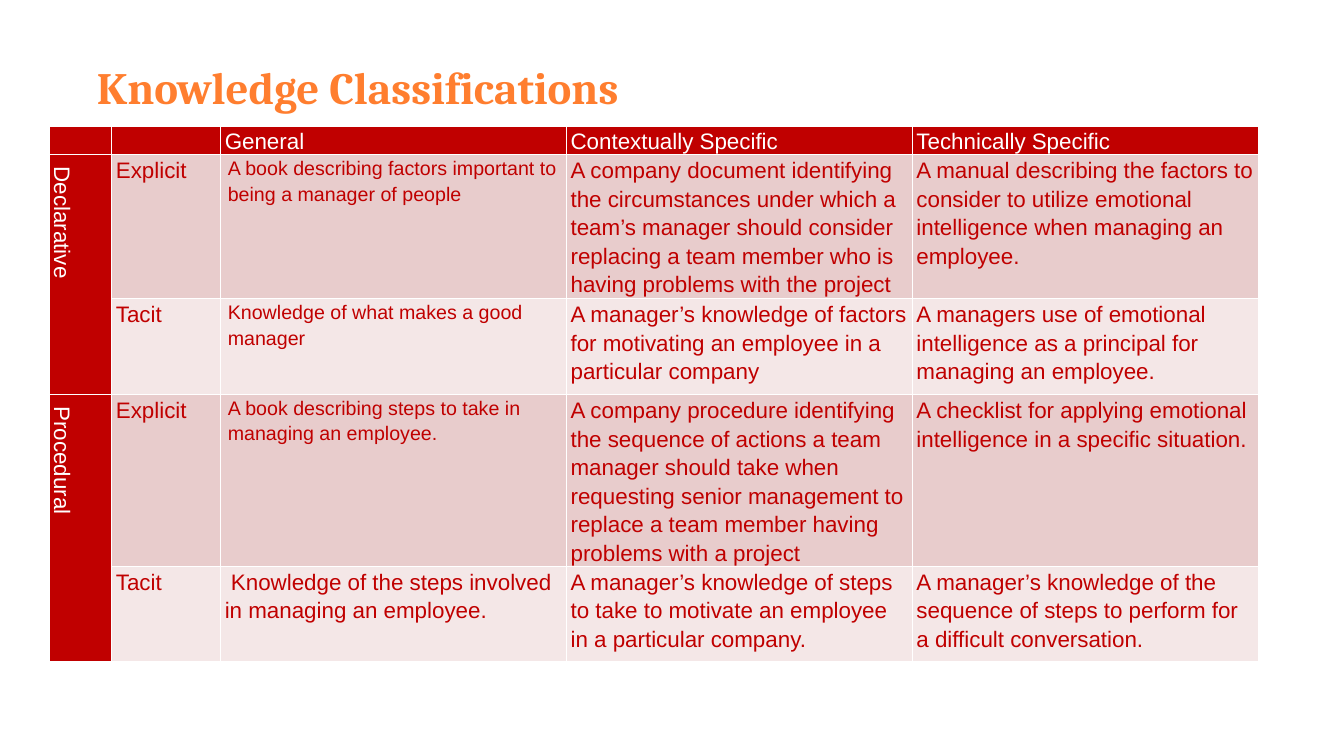
"""Build the knowledge classifications slide."""
from dataclasses import dataclass

from pptx import Presentation, util as u
from pptx.dml.color import RGBColor
from pptx.enum import text
from pptx.oxml import parse_xml
from pptx.oxml.ns import nsdecls

GRID_UNIT = u.Inches(0.01)
SLIDE_COLUMNS, SLIDE_ROWS = 1333, 750
TABLE_LEFT, TABLE_TOP = 49, 125
COLUMN_SPANS = (62, 108, 343, 343, 343)
ROW_SPANS = (26, 143, 95, 169, 95)
RED, WHITE, ORANGE = "C00000", "FFFFFF", "FF7E2F"
BANDS = ("E8CCCC", "F4E7E7")
HEADINGS = ("", "", "General", "Contextually Specific", "Technically Specific")


@dataclass
class KnowledgeRow:
    """One kind of knowledge with its three examples."""
    group: str
    kind: str
    general: str
    contextual: str
    technical: str
    compact: bool = True


KNOWLEDGE = (
    KnowledgeRow(
        "Declarative", "Explicit",
        "A book describing factors important to being a manager of people",
        "A company document identifying the circumstances under which a team’s manager should "
        "consider replacing a team member who is having problems with the project",
        "A manual describing the factors to consider to utilize emotional intelligence when "
        "managing an employee."),
    KnowledgeRow(
        "", "Tacit",
        "Knowledge of what makes a good manager",
        "A manager’s knowledge of factors for motivating an employee in a particular company",
        "A managers use of emotional intelligence as a principal for managing an employee."),
    KnowledgeRow(
        "Procedural", "Explicit",
        "A book describing steps to take in managing an employee.",
        "A company procedure identifying the sequence of actions a team manager should take when "
        "requesting senior management to replace a team member having problems with a project",
        "A checklist for applying emotional intelligence in a specific situation."),
    KnowledgeRow(
        "", "Tacit",
        " Knowledge of the steps involved in managing an employee.",
        "A manager’s knowledge of steps to take to motivate an employee in a particular company.",
        "A manager’s knowledge of the sequence of steps to perform for a difficult conversation.",
        compact=False),
)


def color(value: str) -> RGBColor:
    """Turn a hex string into a colour."""
    return RGBColor.from_string(value)


def grid(count: int) -> u.Emu:
    """Turn a count of grid units into a length."""
    return u.Emu(count * GRID_UNIT)


def style_font(font, name: str, size: int, hex_color: str, bold: bool = False) -> None:
    """Set the face, size, colour and weight of a font."""
    font.name, font.size, font.bold = name, u.Pt(size), bold
    font.color.rgb = color(hex_color)


def add_borders(cell) -> None:
    """Give a cell thin white borders on all sides."""
    properties = cell._tc.get_or_add_tcPr()
    for side in "LRTB":
        properties.append(parse_xml(
            f'<a:ln{side} {nsdecls("a")} w="{u.Pt(1)}"><a:solidFill>'
            f'<a:srgbClr val="{WHITE}"/></a:solidFill></a:ln{side}>'))


def fill_cell(cell, content: str, fill: str, font_color: str, compact: bool = False) -> None:
    """Write one table cell with its fill and font."""
    cell.margin_left = cell.margin_right = grid(7 if compact else 4)
    cell.margin_top = cell.margin_bottom = 0
    add_borders(cell)
    cell.fill.solid()
    cell.fill.fore_color.rgb = color(fill)
    cell.text = content
    paragraph = cell.text_frame.paragraphs[0]
    paragraph.line_spacing = 1.15
    style_font(paragraph.font, "Arial", 14 if compact else 16, font_color)


def turn_cell(cell) -> None:
    """Turn the text of a group cell downwards and indent it."""
    cell._tc.get_or_add_tcPr().set("vert", "vert")
    properties = cell.text_frame.paragraphs[0]._p.get_or_add_pPr()
    properties.set("marL", str(grid(8)))
    properties.set("indent", "0")


def add_title(slide) -> None:
    """Place and format the slide title."""
    title = slide.shapes.title
    title.left, title.top, title.width, title.height = map(grid, (86, 33, 1100, 112))
    title.text_frame.text = "Knowledge Classifications"
    title.text_frame.vertical_anchor = text.MSO_ANCHOR.MIDDLE
    paragraph = title.text_frame.paragraphs[0]
    paragraph.alignment = text.PP_ALIGN.LEFT
    paragraph.line_spacing = 0.9
    style_font(paragraph.font, "Cambria", 32, ORANGE, bold=True)


def add_knowledge_table(slide) -> None:
    """Draw the table of knowledge kinds."""
    table = slide.shapes.add_table(
        len(ROW_SPANS), len(COLUMN_SPANS), grid(TABLE_LEFT), grid(TABLE_TOP),
        grid(sum(COLUMN_SPANS)), grid(sum(ROW_SPANS))).table
    for column, span in zip(table.columns, COLUMN_SPANS):
        column.width = grid(span)
    for row, span in zip(table.rows, ROW_SPANS):
        row.height = grid(span)
    for cell, heading in zip(table.rows[0].cells, HEADINGS):
        fill_cell(cell, heading, RED, WHITE)
    for index, entry in enumerate(KNOWLEDGE):
        group, kind, general, contextual, technical = table.rows[index + 1].cells
        band = BANDS[index % 2]
        fill_cell(group, entry.group, RED, WHITE)
        fill_cell(kind, entry.kind, band, RED)
        fill_cell(general, entry.general, band, RED, entry.compact)
        fill_cell(contextual, entry.contextual, band, RED)
        fill_cell(technical, entry.technical, band, RED)
        if entry.group:
            turn_cell(group)
            group.merge(table.cell(index + 2, 0))


def main() -> None:
    """Build and save the presentation."""
    presentation = Presentation()
    presentation.slide_width = grid(SLIDE_COLUMNS)
    presentation.slide_height = grid(SLIDE_ROWS)
    slide = presentation.slides.add_slide(presentation.slide_layouts[5])
    add_title(slide)
    add_knowledge_table(slide)
    presentation.save("out.pptx")


if __name__ == "__main__":
    main()
